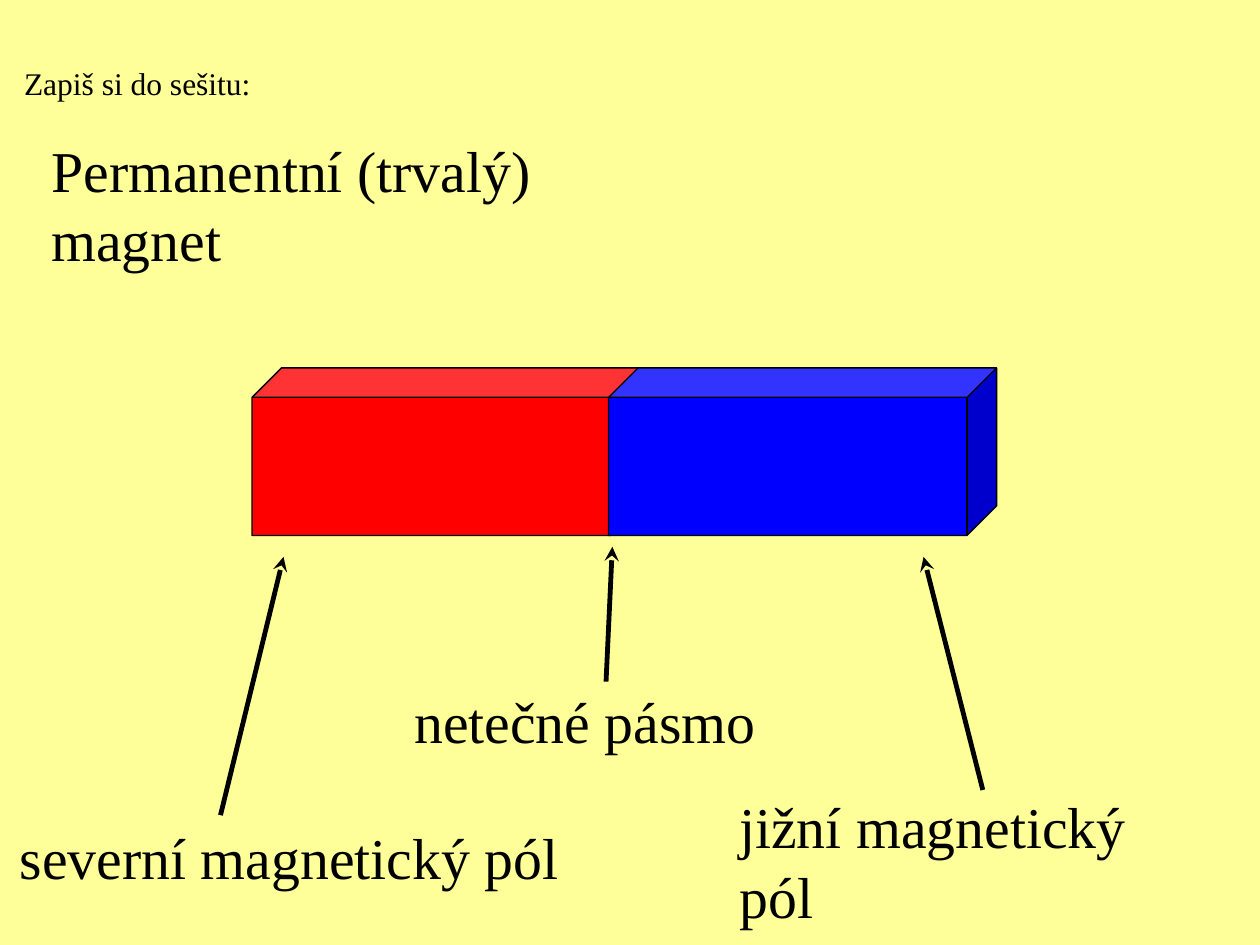
"""Slide showing the parts of a permanent bar magnet."""
from lxml.etree import SubElement
from pptx import Presentation
from pptx.dml.color import RGBColor
from pptx.enum.shapes import MSO_CONNECTOR, MSO_SHAPE
from pptx.enum.text import PP_ALIGN
from pptx.oxml.ns import qn
from pptx.util import Inches, Pt

YELLOW = RGBColor(0xFF, 0xFF, 0x99)
RED = RGBColor(0xFF, 0x00, 0x00)
BLUE = RGBColor(0x00, 0x00, 0xFF)
BLACK = RGBColor(0x00, 0x00, 0x00)
FONT = "Times New Roman"

MAGNET_TOP, HALF_WIDTH, MAGNET_HEIGHT, DEPTH = 2.92, 3.08, 1.33, 0.176
HALVES = [(2, RED), (4.83, BLUE)]
LABELS = [
    ("Permanentní (trvalý) magnet", 0.31, 1.02, 5.2, 0.65, 33, PP_ALIGN.LEFT),
    ("severní magnetický pól", 0.06, 6.47, 4.6, 0.65, 33, PP_ALIGN.LEFT),
    ("jižní magnetický pól", 5.77, 6.23, 3.8, 0.65, 33, PP_ALIGN.LEFT),
    ("netečné pásmo", 3.19, 5.39, 3, 0.65, 33, PP_ALIGN.LEFT),
    ("Zapiš si do sešitu:", 0.08, 0.46, 2.02, 0.4, 18, PP_ALIGN.CENTER),
]
ARROWS = [
    (1.75, 6.47, 2.25, 4.42),
    (7.8, 6.27, 7.33, 4.42),
    (4.81, 5.41, 4.86, 4.34),
]


def add_half(s, left, color):
    sp = s.shapes.add_shape(MSO_SHAPE.CUBE, Inches(left), Inches(MAGNET_TOP),
                            Inches(HALF_WIDTH), Inches(MAGNET_HEIGHT))
    sp.adjustments[0] = DEPTH
    sp.shadow.inherit = False
    sp.fill.solid()
    sp.fill.fore_color.rgb = color
    sp.line.color.rgb = BLACK
    sp.line.width = Pt(0.75)


def add_label(s, text, left, top, width, height, size, align):
    sp = s.shapes.add_textbox(*map(Inches, (left, top, width, height)))
    tf = sp.text_frame
    tf.word_wrap = True
    p = tf.paragraphs[0]
    p.alignment = align
    r = p.add_run()
    r.text = text
    r.font.name = FONT
    r.font.size = Pt(size)
    r.font.color.rgb = BLACK


def add_arrow(s, ends):
    cx = s.shapes.add_connector(MSO_CONNECTOR.STRAIGHT, *map(Inches, ends))
    cx.line.color.rgb = BLACK
    cx.line.width = Pt(2.75)
    SubElement(cx.line._get_or_add_ln(), qn("a:tailEnd"), type="stealth")
    SubElement(cx._element.spPr, qn("a:effectLst"))


def main():
    prs = Presentation()
    prs.slide_width, prs.slide_height = Inches(10), Inches(7.5)
    s = prs.slides.add_slide(prs.slide_layouts[6])
    s.background.fill.solid()
    s.background.fill.fore_color.rgb = YELLOW
    for left, color in HALVES:
        add_half(s, left, color)
    for label in LABELS:
        add_label(s, *label)
    for ends in ARROWS:
        add_arrow(s, ends)
    prs.save("out.pptx")


if __name__ == "__main__":
    main()
